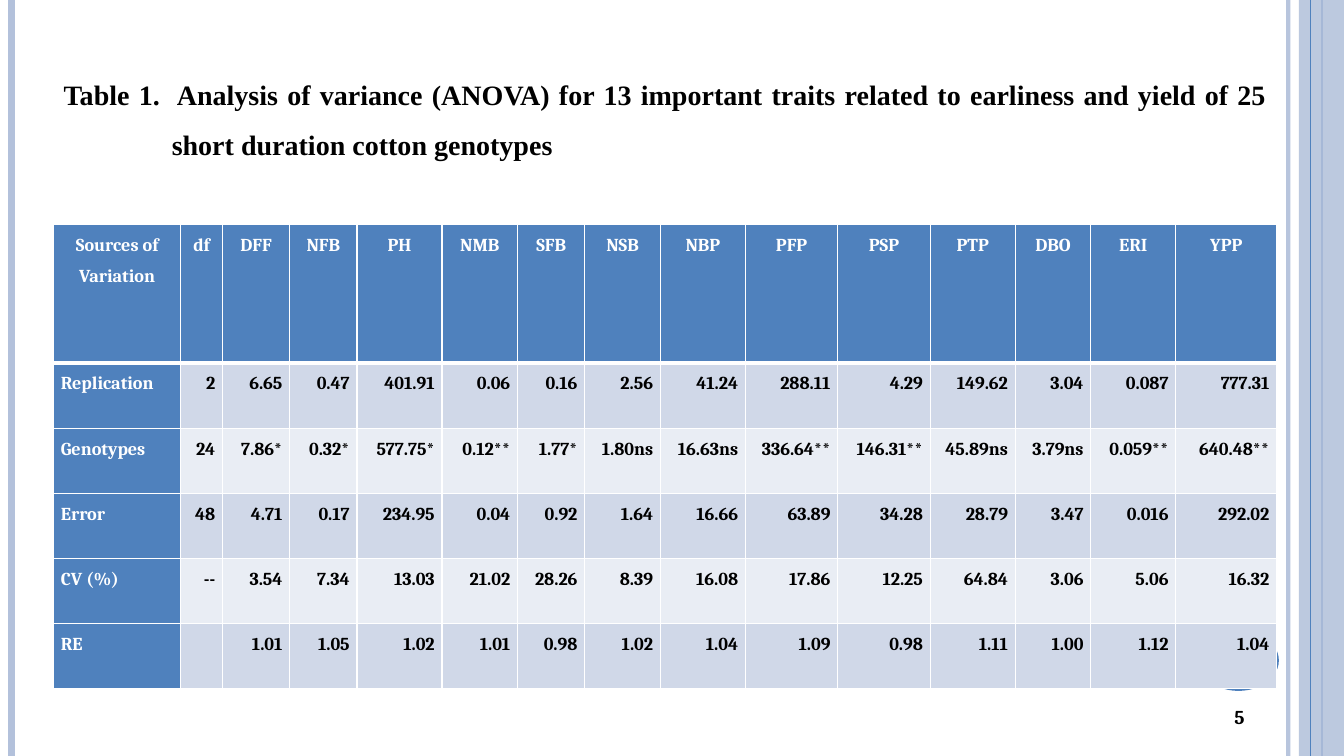
from lxml.etree import SubElement
from pptx import Presentation
from pptx.dml.color import RGBColor
from pptx.enum.shapes import MSO_CONNECTOR, MSO_SHAPE
from pptx.enum.text import MSO_ANCHOR, MSO_AUTO_SIZE, PP_ALIGN
from pptx.oxml.ns import qn
from pptx.util import Pt

PX = 9525  # EMU per px, 96 px to the inch
WIDTH, HEIGHT = 1280, 720

COLORS = {
    "blue": "4F81BD",
    "pale": "B3C1DB",
    "band_dark": "D0D8E8",
    "band_light": "E9EDF4",
    "white": "FFFFFF",
    "black": "000000",
}

TITLE = ("Table 1.  Analysis of variance (ANOVA) for 13 important traits related "
         "to earliness and yield of 25 short duration cotton genotypes")

COL_WIDTHS = [121, 40, 64, 64, 81, 72, 64, 72, 81, 88, 88, 81, 72, 81, 96]
ROW_HEIGHTS = [132] + [62] * 5
ANOVA = [
    ["Sources of Variation", "df", "DFF", "NFB", "PH", "NMB", "SFB", "NSB",
     "NBP", "PFP", "PSP", "PTP", "DBO", "ERI", "YPP"],
    ["Replication", "2", "6.65", "0.47", "401.91", "0.06", "0.16", "2.56",
     "41.24", "288.11", "4.29", "149.62", "3.04", "0.087", "777.31"],
    ["Genotypes", "24", "7.86*", "0.32*", "577.75*", "0.12**", "1.77*", "1.80ns",
     "16.63ns", "336.64**", "146.31**", "45.89ns", "3.79ns", "0.059**", "640.48**"],
    ["Error", "48", "4.71", "0.17", "234.95", "0.04", "0.92", "1.64",
     "16.66", "63.89", "34.28", "28.79", "3.47", "0.016", "292.02"],
    ["CV (%)", "--", "3.54", "7.34", "13.03", "21.02", "28.26", "8.39",
     "16.08", "17.86", "12.25", "64.84", "3.06", "5.06", "16.32"],
    ["RE", "", "1.01", "1.05", "1.02", "1.01", "0.98", "1.02",
     "1.04", "1.09", "0.98", "1.11", "1.00", "1.12", "1.04"],
]


def rgb(name):
    return RGBColor.from_string(COLORS[name])


def emu(*lengths):
    return [n * PX for n in lengths]


def add_run(p, text, size, font, color="black"):
    r = p.add_run()
    r.text = text
    r.font.size = Pt(size)
    r.font.name = font
    r.font.bold = True
    r.font.color.rgb = rgb(color)


def set_alpha(sp, percent):
    for clr in sp._element.spPr.iter(qn("a:srgbClr")):
        SubElement(clr, qn("a:alpha"), val=str(percent * 1000))


def add_rule(slide, x, color, weight, alpha=100):
    """Vertical line over the full slide height."""
    ln = slide.shapes.add_connector(MSO_CONNECTOR.STRAIGHT, *emu(x, 0, x, HEIGHT))
    ln.line.color.rgb = rgb(color)
    ln.line.width = Pt(weight)
    SubElement(ln._element.spPr, qn("a:effectLst"))
    if alpha < 100:
        set_alpha(ln, alpha)


def add_block(slide, kind, box, color):
    sp = slide.shapes.add_shape(kind, *emu(*box))
    sp.shadow.inherit = False
    sp.fill.solid()
    sp.fill.fore_color.rgb = rgb(color)
    sp.line.fill.background()
    return sp


def add_frame(slide):
    """Side rules, right band and the disc behind the table corner."""
    add_rule(slide, 1227, "pale", 3, 93)
    add_rule(slide, 11, "pale", 4.5)
    add_rule(slide, 1259, "blue", 1.5)
    band = add_block(slide, MSO_SHAPE.RECTANGLE, (1237, 0, 43, HEIGHT), "pale")
    set_alpha(band, 87)
    add_rule(slide, 1248, "blue", 0.75)
    add_block(slide, MSO_SHAPE.OVAL, (1141, 600, 77, 58), "blue")


def set_borders(cell, **weights):
    tcPr = cell._tc.get_or_add_tcPr()
    for i, side in enumerate("LRTB"):
        ln = tcPr.makeelement(qn(f"a:ln{side}"), {"w": str(Pt(weights.get(side, 1)))})
        fill = SubElement(ln, qn("a:solidFill"))
        SubElement(fill, qn("a:srgbClr"), val=COLORS["white"])
        tcPr.insert(i, ln)


def add_anova_table(slide, x, y):
    tbl = slide.shapes.add_table(
        len(ANOVA), len(COL_WIDTHS),
        *emu(x, y, sum(COL_WIDTHS), sum(ROW_HEIGHTS))).table
    for col, w in zip(tbl.columns, COL_WIDTHS):
        col.width = w * PX
    for row, h in zip(tbl.rows, ROW_HEIGHTS):
        row.height = h * PX

    for i, values in enumerate(ANOVA):
        for j, text in enumerate(values):
            cell = tbl.cell(i, j)
            cell.margin_left = cell.margin_right = 7 * PX
            cell.margin_top = cell.margin_bottom = 0
            heading = i == 0 or j == 0
            band = "band_dark" if i % 2 else "band_light"
            cell.fill.solid()
            cell.fill.fore_color.rgb = rgb("blue" if heading else band)
            set_borders(cell, B=3 if i == 0 else 1, T=3 if i == 1 else 1)
            p = cell.text_frame.paragraphs[0]
            p.line_spacing = 1.5
            if i == 0:
                p.alignment = PP_ALIGN.CENTER
            else:
                p.alignment = PP_ALIGN.RIGHT if j else PP_ALIGN.LEFT
            if text:
                add_run(p, text, 13, "Cambria", "white" if heading else "black")


def set_title(slide, x, y, w, h):
    title = slide.shapes.title
    title.left, title.top, title.width, title.height = emu(x, y, w, h)
    tf = title.text_frame
    tf.word_wrap = True
    tf.auto_size = MSO_AUTO_SIZE.SHAPE_TO_FIT_TEXT
    tf.vertical_anchor = MSO_ANCHOR.TOP
    p = tf.paragraphs[0]
    p.alignment = PP_ALIGN.JUSTIFY
    p.line_spacing = 1.5
    p.space_after = Pt(6)
    # Hanging indent
    pPr = p._p.get_or_add_pPr()
    pPr.set("marL", str(103 * PX))
    pPr.set("indent", str(-103 * PX))
    add_run(p, TITLE, 20, "Times New Roman")


def add_page_number(slide, x, y, w, h):
    tf = slide.shapes.add_textbox(*emu(x, y, w, h)).text_frame
    tf.word_wrap = True
    tf.vertical_anchor = MSO_ANCHOR.MIDDLE
    p = tf.paragraphs[0]
    p.alignment = PP_ALIGN.CENTER
    add_run(p, "5", 14, "Cambria")


def main():
    prs = Presentation()
    prs.slide_width, prs.slide_height = emu(WIDTH, HEIGHT)
    slide = prs.slides.add_slide(prs.slide_layouts[5])
    slide.background.fill.solid()
    slide.background.fill.fore_color.rgb = rgb("white")

    add_frame(slide)
    add_anova_table(slide, 51, 214)
    set_title(slide, 51, 53, sum(COL_WIDTHS), 102)
    add_page_number(slide, 1138, 655, 85, 55)
    prs.save("out.pptx")


if __name__ == "__main__":
    main()
